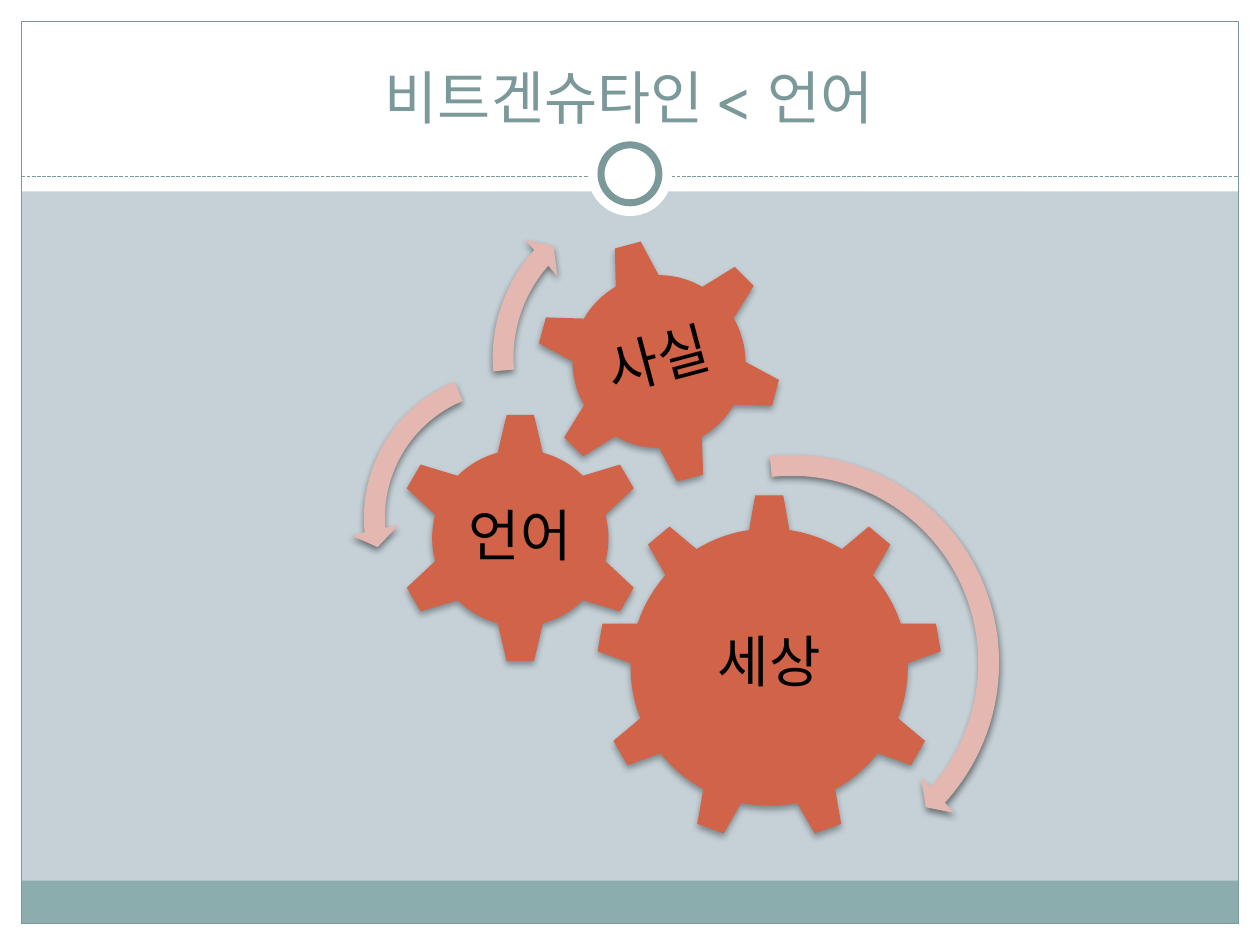
from lxml import etree
from pptx import Presentation
from pptx.dml.color import RGBColor
from pptx.enum.dml import MSO_LINE
from pptx.enum.shapes import MSO_CONNECTOR, MSO_SHAPE
from pptx.enum.text import MSO_ANCHOR, PP_ALIGN
from pptx.oxml.ns import qn
from pptx.util import Inches, Pt

COLS, ROWS = 100, 75
WHITE, TEAL, BAND, BACK = "FFFFFF", "7C999A", "8CADAE", "C5D1D7"
GEAR, ARROW, BLACK = "D16349", "E5B7B1", "000000"


def rgb(hex_code):
    return RGBColor.from_string(hex_code)


class Deck:
    """Holds the style and the current slide; lengths are grid columns and rows."""
    font = "TeX Gyre Schola"

    def __init__(self):
        self.prs = Presentation()
        self.prs.slide_width, self.prs.slide_height = Inches(10), Inches(7.5)
        self.s = self.prs.slides.add_slide(self.prs.slide_layouts[5])
        fill = self.s.background.fill
        fill.solid()
        fill.fore_color.rgb = rgb(BACK)

    def x(self, cols):
        return round(self.prs.slide_width * cols / COLS)

    def y(self, rows):
        return round(self.prs.slide_height * rows / ROWS)

    def box(self, left, top, width, height):
        return self.x(left), self.y(top), self.x(width), self.y(height)

    def text(self, shape, text, size, color, anchor, inset):
        tf = shape.text_frame
        tf.text = text
        tf.word_wrap = True
        tf.vertical_anchor = anchor
        tf.margin_left = tf.margin_right = Inches(inset)
        tf.margin_top = tf.margin_bottom = Inches(0.04)
        p = tf.paragraphs[0]
        p.alignment = PP_ALIGN.CENTER
        font = p.runs[0].font
        font.name, font.size = self.font, Pt(size)
        font.color.rgb = rgb(color)
        return p

    def title(self, text, *box):
        sp = self.s.shapes.title
        sp.left, sp.top, sp.width, sp.height = self.box(*box)
        self.text(sp, text, 33, TEAL, MSO_ANCHOR.BOTTOM, 0.1)
        sp.element.getparent().append(sp.element)  # in front of the white bands

    def shape(self, kind, box, fill=None, line=None, weight=0.75):
        sp = self.s.shapes.add_shape(kind, *self.box(*box))
        sp.shadow.inherit = False
        if fill:
            sp.fill.solid()
            sp.fill.fore_color.rgb = rgb(fill)
        else:
            sp.fill.background()
        if line:
            sp.line.color.rgb = rgb(line)
            sp.line.width = Pt(weight)
        else:
            sp.line.fill.background()
        return sp

    def dashed_rule(self, left, right, row):
        c = self.s.shapes.add_connector(MSO_CONNECTOR.STRAIGHT, self.x(left),
                                        self.y(row), self.x(right), self.y(row))
        c.line.color.rgb = rgb(TEAL)
        c.line.width = Pt(0.75)
        c.line.dash_style = MSO_LINE.SQUARE_DOT
        etree.SubElement(c.element.spPr, qn("a:effectLst"))

    def drop_shadow(self, sp, opacity):
        effects = sp.element.spPr.find(qn("a:effectLst"))
        shadow = etree.SubElement(effects, qn("a:outerShdw"), blurRad=str(Pt(4)),
                                  dist=str(Pt(2)), dir="5400000", rotWithShape="0")
        color = etree.SubElement(shadow, qn("a:srgbClr"), val=BLACK)
        etree.SubElement(color, qn("a:alpha"), val=str(opacity * 1000))

    def gear(self, kind, label, left, top, size, rotation=0):
        sp = self.shape(kind, (left, top, size, size), GEAR)
        sp.rotation = rotation
        self.drop_shadow(sp, 35)
        p = self.text(sp, label, 32, BLACK, MSO_ANCHOR.MIDDLE, 0.04)
        p.line_spacing = 0.9

    def arc_arrow(self, kind, left, top, size, adjustments):
        sp = self.shape(kind, (left, top, size, size), ARROW)
        for i, value in enumerate(adjustments):
            sp.adjustments[i] = value
        self.drop_shadow(sp, 45)


def main():
    d = Deck()
    edge = 1.7
    inner = COLS - 2 * edge
    for box in ((0, ROWS - edge, COLS, edge), (0, 0, COLS, 15.2),
                (0, 0, edge, ROWS), (COLS - edge, 0, edge, ROWS)):
        d.shape(MSO_SHAPE.RECTANGLE, box, WHITE)
    d.shape(MSO_SHAPE.RECTANGLE, (edge, 69.9, inner, 3.4), BAND)
    d.shape(MSO_SHAPE.RECTANGLE, (edge, edge, inner, ROWS - 2 * edge), line=TEAL)
    d.dashed_rule(edge, COLS - edge, 14)
    for size, line in ((6.7, None), (4.6, TEAL)):
        box = ((COLS - size) / 2, 13.8 - size / 2, size, size)
        d.shape(MSO_SHAPE.OVAL, box, WHITE, line, 4)

    d.title("비트겐슈타인 < 언어", 3.3, 2.5, 93.3, 8.3)

    d.gear(MSO_SHAPE.GEAR_9, "세상", 47.3, 39.2, 27.5)
    d.gear(MSO_SHAPE.GEAR_6, "언어", 31.3, 32.7, 20)
    d.gear(MSO_SHAPE.GEAR_6, "사실", 42.5, 18.9, 19.6, 345)

    right, left = MSO_SHAPE.CIRCULAR_ARROW, MSO_SHAPE.LEFT_CIRCULAR_ARROW
    d.arc_arrow(right, 45.2, 35, 35.2, (0.047, 2.99, 25.25, 158.43, 0.055))
    d.arc_arrow(left, 27.8, 28.3, 25.6, (0.065, 4.3, 104.89, 148.38, 0.075))
    d.arc_arrow(right, 38, 14.6, 27.6, (0.06, 3.94, 133.14, 105.08, 0.07))
    d.prs.save("out.pptx")


if __name__ == "__main__":
    main()
